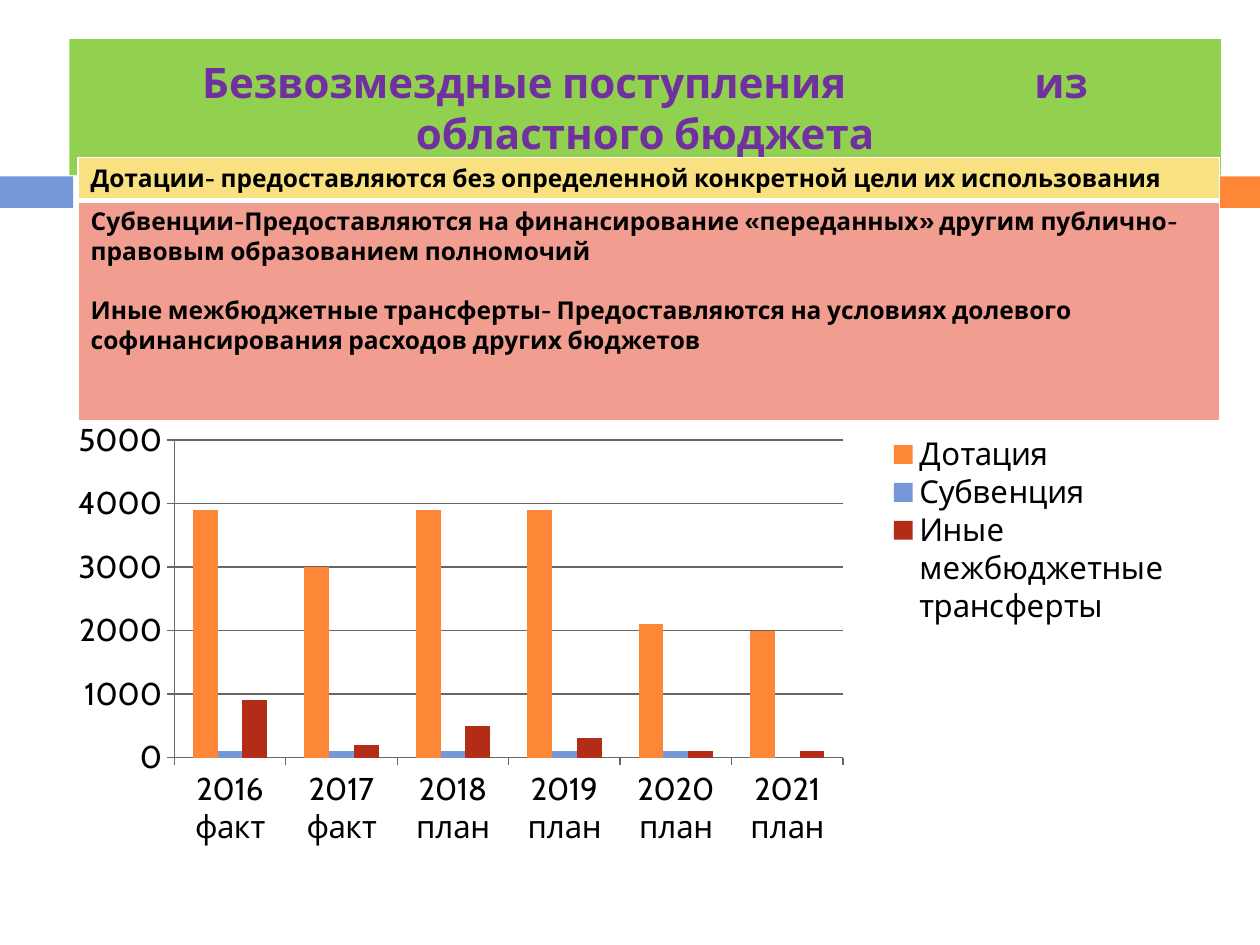
"""Build the slide on grants from the regional budget."""
from lxml import etree
from pptx import Presentation
from pptx.chart.data import CategoryChartData
from pptx.dml.color import RGBColor
from pptx.enum import chart as charts, shapes, text
from pptx.oxml import ns, parse_xml
from pptx.util import Inches, Pt

COLORS = {
    "blue": "7598D9", "orange": "FE8637", "red": "B32C16", "green": "92D050",
    "purple": "7030A0", "yellow": "F9E181", "pink": "F19E91",
    "black": "000000", "white": "FFFFFF", "gray": "666666",
}


def style_font(font, color, **values):
    font.color.rgb = RGBColor.from_string(COLORS[color])
    for name, value in {"name": "Cabin", **values}.items():
        setattr(font, name, value)


def add_layout(element, position, target=""):
    for old in element.findall(ns.qn("c:layout")):
        element.remove(old)
    parts = "".join(f'<c:{key}Mode val="edge"/>' for key in "xy")
    parts += "".join(f'<c:{key} val="{value}"/>' for key, value in zip("xywh", position))
    return parse_xml(f'<c:layout {ns.nsdecls("c")}><c:manualLayout>{target}{parts}'
                     '</c:manualLayout></c:layout>')


presentation = Presentation()
presentation.slide_width, presentation.slide_height = Inches(10), Inches(7.5)
slide = presentation.slides.add_slide(presentation.slide_layouts[6])

for color, *box in [("blue", 0, 1.4, 0.58, 0.25), ("orange", 0.65, 1.4, 9.35, 0.25),
                    ("green", 0.55, 0.31, 9.14, 1.08)]:
    shape = slide.shapes.add_shape(shapes.MSO_SHAPE.RECTANGLE, *map(Inches, box))
    shape.shadow.inherit = False
    shape.fill.solid()
    shape.fill.fore_color.rgb = RGBColor.from_string(COLORS[color])
    shape.line.fill.background()

title = shape.text_frame
title.word_wrap = True
title.vertical_anchor = text.MSO_ANCHOR.MIDDLE
paragraph = title.paragraphs[0]
paragraph.alignment = text.PP_ALIGN.CENTER
for words, spacing in [("Безвозмездные поступления", 0), (" ", 10200), ("из областного бюджета", 0)]:
    run = paragraph.add_run()
    run.text = words
    style_font(run.font, "purple", size=Pt(24), bold=True)
    if spacing:
        run.font._element.set("spc", str(spacing))

data = CategoryChartData()
data.categories = ["2016 факт", "2017 факт", "2018 план", "2019 план", "2020 план", "2021 план"]
grants = [
    ("Дотация", "orange", [3900, 3000, 3900, 3900, 2100, 2000]),
    ("Субвенция", "blue", [100, 100, 100, 100, 100, 0]),
    ("Иные межбюджетные трансферты", "red", [900, 200, 500, 300, 100, 100]),
]
for name, color, values in grants:
    data.add_series(name, values)
chart = slide.shapes.add_chart(
    charts.XL_CHART_TYPE.COLUMN_CLUSTERED, Inches(0.62), Inches(3.05),
    Inches(8.96), Inches(4.06), data).chart
style_font(chart.font, "black", size=Pt(18))
chart.has_title = False
chart.has_legend = True
chart.legend.position = charts.XL_LEGEND_POSITION.RIGHT
chart.legend.include_in_layout = False
plot = chart.plots[0]
plot.gap_width, plot.overlap, plot.vary_by_categories = 150, 0, False
for series, (name, color, values) in zip(plot.series, grants):
    series.format.fill.solid()
    series.format.fill.fore_color.rgb = RGBColor.from_string(COLORS[color])

value_axis = chart.value_axis
for name, value in {"minimum_scale": 0, "maximum_scale": 5000, "major_unit": 1000,
                    "has_major_gridlines": True}.items():
    setattr(value_axis, name, value)
for axis in (chart.category_axis, value_axis):
    axis.major_tick_mark = charts.XL_TICK_MARK.OUTSIDE
for item in (chart.category_axis, value_axis, value_axis.major_gridlines):
    item.format.line.color.rgb = RGBColor.from_string(COLORS["gray"])
    item.format.line.width = Pt(0.75)

plot_area = chart._chartSpace.chart.plotArea
plot_area.insert(0, add_layout(plot_area, (0.072, 0.109, 0.601, 0.621),
                               '<c:layoutTarget val="inner"/>'))
legend = chart.legend._element
legend.find(ns.qn("c:legendPos")).addnext(add_layout(legend, (0.7, 0.1, 0.28, 0.37)))

heights = [0.34, 1.75]
definitions = [
    ("yellow", ["Дотации- предоставляются без определенной конкретной цели их использования"]),
    ("pink", ["Субвенции-Предоставляются на финансирование «переданных» другим "
              "публично-правовым образованием полномочий",
              "Иные межбюджетные трансферты- Предоставляются на условиях долевого "
              "софинансирования расходов других бюджетов"]),
]
table = slide.shapes.add_table(2, 1, Inches(0.62), Inches(1.25),
                               Inches(9.06), Inches(sum(heights))).table
for index, (color, lines) in enumerate(definitions):
    table.rows[index].height = Inches(heights[index])
    cell = table.cell(index, 0)
    for number, line in enumerate(lines):
        frame = cell.text_frame
        paragraph = frame.add_paragraph() if number else frame.paragraphs[0]
        paragraph.space_before = Pt(17 * number)
        run = paragraph.add_run()
        run.text = line
        style_font(run.font, "black", size=Pt(14), bold=True)
    properties = cell._tc.get_or_add_tcPr()
    for side in "LRTB":
        between = (index, side) in [(0, "B"), (1, "T")]
        border = etree.SubElement(properties, ns.qn(f"a:ln{side}"), w=str(Pt(3 if between else 1)))
        fill = etree.SubElement(border, ns.qn("a:solidFill"))
        etree.SubElement(fill, ns.qn("a:srgbClr"), val=COLORS["white"])
    cell.fill.solid()
    cell.fill.fore_color.rgb = RGBColor.from_string(COLORS[color])

presentation.save("out.pptx")
